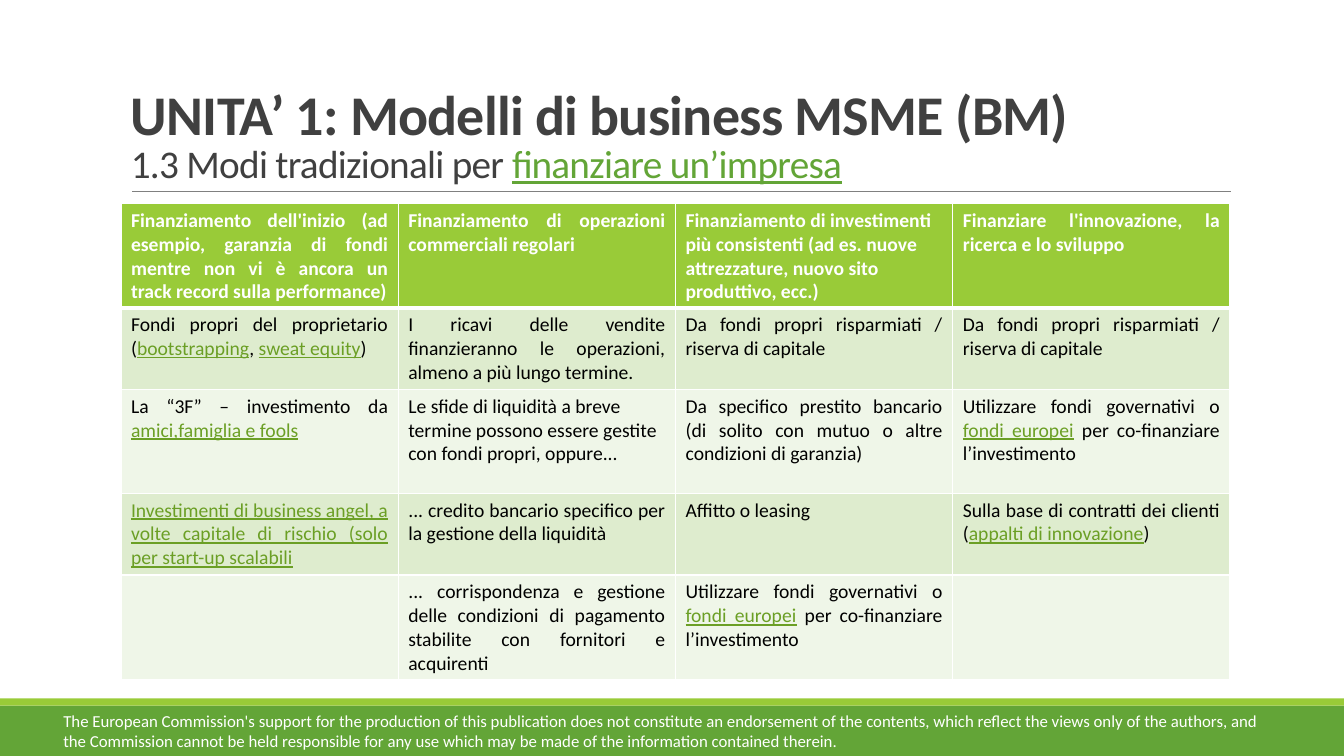
import pptx
import pptx.util
import pptx.dml.color
import pptx.enum.shapes
import pptx.enum.text
import pptx.oxml
import pptx.oxml.ns
import lxml.etree

Inches, Pt = pptx.util.Inches, pptx.util.Pt
RGB = pptx.dml.color.RGBColor.from_string
ALIGN = pptx.enum.text.PP_ALIGN
ANCHOR = pptx.enum.text.MSO_ANCHOR
qn = pptx.oxml.ns.qn

COLORS = {
    "white": "FFFFFF", "black": "000000", "title": "404040", "rule": "808080",
    "green": "63A537", "lime": "99CB38", "link": "6B9F25",
    "band_dark": "DEECCE", "band_light": "EFF6E8",
}
W, H = 13.33, 7.5
FOOTER_TOP = 7
MARGIN, COL_W = 1.2, 2.75
TALL, SHORT = 1.03, 0.81


def write(p, text, size, color="black", link="link", bold=False,
          align=ALIGN.LEFT, spacing=None, tracking=0):
    """Fill a paragraph; parts in [brackets] become underlined link text."""
    p.alignment = align
    if spacing:
        p.line_spacing = spacing
    for i, part in enumerate(text.replace("]", "[").split("[")):
        if not part:
            continue
        is_link = i % 2 == 1
        r = p.add_run()
        r.text = part
        r.font.name = "Calibri"
        r.font.size = Pt(size)
        r.font.bold = bold
        r.font.underline = is_link
        r.font.color.rgb = RGB(COLORS[link if is_link else color])
        if tracking:
            r._r.get_or_add_rPr().set("spc", str(round(tracking * 100)))


def add_border(cell, side, width):
    ln = lxml.etree.SubElement(cell._tc.get_or_add_tcPr(), qn(f"a:ln{side}"),
                               w=str(Pt(width)))
    fill = lxml.etree.SubElement(ln, qn("a:solidFill"))
    lxml.etree.SubElement(fill, qn("a:srgbClr"), val=COLORS["white"])


prs = pptx.Presentation()
prs.slide_width, prs.slide_height = Inches(W), Inches(H)
slide = prs.slides.add_slide(prs.slide_layouts[6])

# Footer bands and the rule under the title
for top, height, color in [(FOOTER_TOP, H - FOOTER_TOP, "green"),
                           (FOOTER_TOP - 0.07, 0.07, "lime")]:
    sp = slide.shapes.add_shape(pptx.enum.shapes.MSO_SHAPE.RECTANGLE,
                                0, Inches(top), prs.slide_width, Inches(height))
    sp.shadow.inherit = False
    sp.fill.solid()
    sp.fill.fore_color.rgb = RGB(COLORS[color])
    sp.line.fill.background()

rule = slide.shapes.add_connector(pptx.enum.shapes.MSO_CONNECTOR.STRAIGHT,
                                  Inches(1.31), Inches(1.9), Inches(12.21), Inches(1.9))
rule.line.color.rgb = RGB(COLORS["rule"])
rule.line.width = Pt(0.5)
lxml.etree.SubElement(rule._element.spPr, qn("a:effectLst"))

# Title and footer text
tf = slide.shapes.add_textbox(Inches(MARGIN), Inches(0.31),
                              Inches(4 * COL_W), Inches(1.59)).text_frame
tf.word_wrap = True
tf.vertical_anchor = ANCHOR.BOTTOM
heading = dict(color="title", link="green", spacing=0.85, tracking=-0.5)
write(tf.paragraphs[0], "UNITA’ 1: Modelli di business MSME (BM)", 40, bold=True, **heading)
write(tf.add_paragraph(), "1.3 Modi tradizionali per [finanziare un’impresa]", 28, **heading)

tf = slide.shapes.add_textbox(Inches(0.53), Inches(FOOTER_TOP),
                              Inches(12.3), Inches(H - FOOTER_TOP)).text_frame
tf.word_wrap = True
write(tf.paragraphs[0],
      "The European Commission's support for the production of this publication does not "
      "constitute an endorsement of the contents, which reflect the views only of the authors, "
      "and the Commission cannot be held responsible for any use which may be made of the "
      "information contained therein.", 12, color="white")

# Financing table
own_funds = "Da fondi propri risparmiati / riserva di capitale"
public_funds = "Utilizzare fondi governativi o [fondi europei] per co-finanziare l’investimento"
rows = [
    ["Finanziamento dell'inizio (ad esempio, garanzia di fondi mentre non vi è ancora un "
     "track record sulla performance)",
     "Finanziamento di operazioni commerciali regolari",
     "Finanziamento di investimenti più consistenti (ad es. nuove attrezzature, nuovo sito "
     "produttivo, ecc.)",
     "Finanziare l'innovazione, la ricerca e lo sviluppo"],
    ["Fondi propri del proprietario ([bootstrapping], [sweat equity])",
     "I ricavi delle vendite finanzieranno le operazioni, almeno a più lungo termine.",
     own_funds, own_funds],
    ["La “3F” – investimento da [amici,famiglia e fools]",
     "Le sfide di liquidità a breve termine possono essere gestite con fondi propri, oppure...",
     "Da specifico prestito bancario (di solito con mutuo o altre condizioni di garanzia)",
     public_funds],
    ["[Investimenti di business angel, a volte capitale di rischio (solo per start-up scalabili]",
     "... credito bancario specifico per la gestione della liquidità",
     "Affitto o leasing",
     "Sulla base di contratti dei clienti ([appalti di innovazione])"],
    ["",
     "... corrispondenza e gestione delle condizioni di pagamento stabilite con fornitori e "
     "acquirenti",
     public_funds, ""],
]
left_aligned = {(0, 2), (2, 1)}
table = slide.shapes.add_table(len(rows), 4, Inches(MARGIN), Inches(2.02),
                               Inches(4 * COL_W), Inches(3 * TALL + 2 * SHORT)).table
for col in table.columns:
    col.width = Inches(COL_W)
for i, texts in enumerate(rows):
    table.rows[i].height = Inches(SHORT if i % 2 else TALL)
    band = "lime" if i == 0 else "band_dark" if i % 2 else "band_light"
    for j, text in enumerate(texts):
        cell = table.cell(i, j)
        for side in "LRTB":
            heavy = (i, side) in [(0, "B"), (1, "T")]
            add_border(cell, side, 3 if heavy else 1)
        cell.fill.solid()
        cell.fill.fore_color.rgb = RGB(COLORS[band])
        write(cell.text_frame.paragraphs[0], text, 14,
              color="black" if i else "white", bold=i == 0,
              align=ALIGN.LEFT if (i, j) in left_aligned else ALIGN.JUSTIFY)

prs.save("out.pptx")
